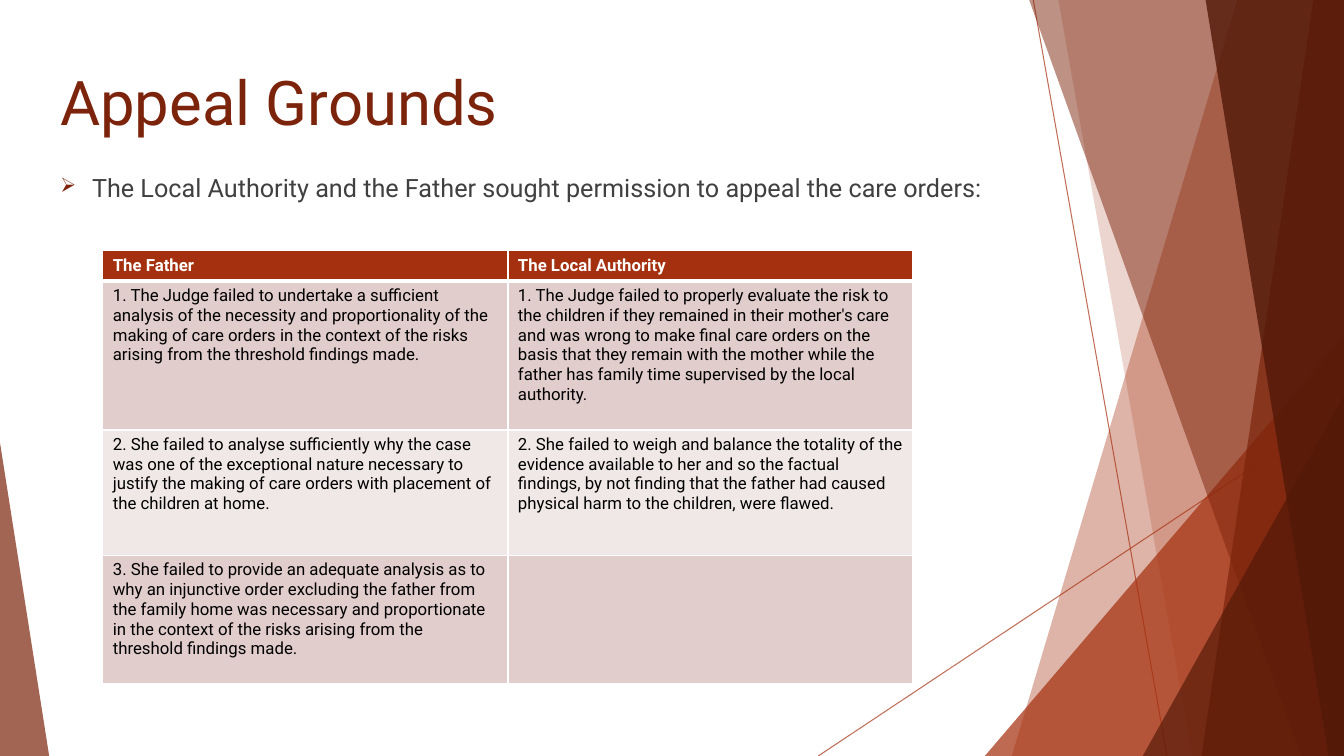
"""Build the Appeal Grounds slide."""
import dataclasses

import lxml.etree
import pptx
import pptx.dml.color
import pptx.enum.shapes
import pptx.enum.text
import pptx.oxml.ns
import pptx.util

Cm = pptx.util.Cm
Pt = pptx.util.Pt
qn = pptx.oxml.ns.qn


@dataclasses.dataclass(frozen=True)
class Theme:
    """Hold the colours, font and type sizes."""
    font: str = "Roboto"
    red: str = "A5300F"
    brown: str = "7C240B"
    dark: str = "521808"
    grey: str = "404040"
    black: str = "000000"
    white: str = "FFFFFF"
    bands: tuple = ("E1CDCC", "F0E8E7")
    title: int = 44
    body: int = 18
    cell: int = 12


THEME = Theme()
WIDE, HIGH, TOP = 33.87, 19.05, -0.02

GROUNDS = [
    ("The Father", "The Local Authority"),
    ("1. The Judge failed to undertake a sufficient analysis of the necessity and "
     "proportionality of the making of care orders in the context of the risks arising "
     "from the threshold findings made.",
     "1. The Judge failed to properly evaluate the risk to the children if they remained "
     "in their mother's care and was wrong to make final care orders on the basis that "
     "they remain with the mother while the father has family time supervised by the "
     "local authority."),
    ("2. She failed to analyse sufficiently why the case was one of the exceptional "
     "nature necessary to justify the making of care orders with placement of the "
     "children at home.",
     "2. She failed to weigh and balance the totality of the evidence available to her "
     "and so the factual findings, by not finding that the father had caused physical "
     "harm to the children, were flawed."),
    ("3. She failed to provide an adequate analysis as to why an injunctive order "
     "excluding the father from the family home was necessary and proportionate in the "
     "context of the risks arising from the threshold findings made.", ""),
]


def rgb(code):
    """Turn a hex code into a colour."""
    return pptx.dml.color.RGBColor.from_string(code)


def add_node(parent, tag, **attrs):
    """Append an XML child with attributes."""
    node = lxml.etree.SubElement(parent, qn(tag))
    for key, value in attrs.items():
        node.set(key, str(value))
    return node


def fade(part, alpha):
    """Give the solid colour in a part an opacity in percent."""
    tint = next(part.iter(qn("a:srgbClr")))
    add_node(tint, "a:alpha", val=alpha * 1000)


def paint(shape, color, alpha):
    """Fill a shape with a clear tint and no outline."""
    shape.shadow.inherit = False
    shape.line.fill.background()
    shape.fill.solid()
    shape.fill.fore_color.rgb = rgb(color)
    fade(shape.fill._xPr, alpha)


def add_ray(slide, *ends):
    """Draw a thin slanted line."""
    kind = pptx.enum.shapes.MSO_CONNECTOR.STRAIGHT
    ray = slide.shapes.add_connector(kind, *map(Cm, ends))
    ray.line.width = Pt(0.75)
    ray.line.color.rgb = rgb(THEME.red)
    fade(ray.line._ln, 70)
    add_node(ray._element.spPr, "a:effectLst")


def add_pane(slide, head, foot, color, alpha):
    """Draw a pane from a slanted left side to the slide's right edge."""
    pen = slide.shapes.build_freeform(Cm(head), Cm(TOP))
    spots = [(WIDE, TOP), (WIDE, HIGH), (foot, HIGH)]
    pen.add_line_segments([(Cm(x), Cm(y)) for x, y in spots], close=True)
    paint(pen.convert_to_shape(), color, alpha)


def add_wedge(slide, left, top, width, tip, color, alpha):
    """Draw a triangle that stands on the slide's lower edge."""
    kind = pptx.enum.shapes.MSO_SHAPE.ISOSCELES_TRIANGLE
    box = map(Cm, (left, top, width, HIGH - top))
    wedge = slide.shapes.add_shape(kind, *box)
    wedge.adjustments[0] = tip
    paint(wedge, color, alpha)


def put_text(frame, text, size, color, bold=False, bullet=None):
    """Write one formatted paragraph into a text frame."""
    frame.word_wrap = True
    para = frame.paragraphs[0]
    para.font.size = Pt(size)
    if text:
        run = para.add_run()
        run.text = text
        run.font.name = THEME.font
        run.font.size = Pt(size)
        run.font.bold = bold
        run.font.color.rgb = rgb(color)
    if bullet:
        props = para._p.get_or_add_pPr()
        props.set("marL", str(Cm(0.8)))
        props.set("indent", str(Cm(-0.8)))
        marks = [add_node(props, "a:buClr"),
                 add_node(props, "a:buSzPct", val=80000),
                 add_node(props, "a:buChar", char=bullet)]
        add_node(marks[0], "a:srgbClr", val=THEME.brown)
        props.extend(props.findall(qn("a:defRPr")))


def add_box(slide, top, text, anchor, **style):
    """Place a text box in the main column."""
    box = slide.shapes.add_textbox(Cm(1.27), Cm(top), Cm(23.88), Cm(2.44))
    box.text_frame.vertical_anchor = anchor
    put_text(box.text_frame, text, **style)


def rule_cell(cell, widths):
    """Draw white borders on the four sides of a cell."""
    props = cell._tc.get_or_add_tcPr()
    for spot, (side, width) in enumerate(widths.items()):
        line = add_node(props, "a:ln" + side, w=Pt(width))
        add_node(add_node(line, "a:solidFill"), "a:srgbClr", val=THEME.white)
        props.insert(spot, line)


def add_grid(slide, rows, highs):
    """Build the table with a header and banded rows."""
    size = map(Cm, (2.59, 6.32, 20.42, sum(highs)))
    grid = slide.shapes.add_table(len(rows), 2, *size).table
    for col in grid.columns:
        col.width = Cm(10.21)
    for i, (texts, high) in enumerate(zip(rows, highs)):
        grid.rows[i].height = Cm(high)
        head = i == 0
        for j, text in enumerate(texts):
            cell = grid.cell(i, j)
            cell.fill.solid()
            cell.fill.fore_color.rgb = rgb(THEME.red if head else THEME.bands[(i - 1) % 2])
            rule_cell(cell, {"L": 1, "R": 1, "T": 3 if i == 1 else 1, "B": 3 if head else 1})
            put_text(cell.text_frame, text, size=THEME.cell, bold=head,
                     color=THEME.white if head else THEME.black)


def add_decor(slide):
    """Draw the lines, panes and wedges at the slide's edges."""
    add_ray(slide, 26.04, 0, 29.41, HIGH)
    add_ray(slide, WIDE, 10.24, 20.62, HIGH)
    add_pane(slide, 31.19, 25.5, THEME.red, 36)
    add_pane(slide, 26.67, 30.05, THEME.red, 20)
    add_wedge(slide, 24.82, 8.46, 9.05, 1, THEME.red, 72)
    add_pane(slide, 25.93, 32.79, THEME.brown, 50)
    add_pane(slide, 33.1, 30.28, THEME.brown, 70)
    add_pane(slide, 30.38, 33.48, THEME.dark, 80)
    add_wedge(slide, 28.8, 9.98, 5.07, 1, THEME.dark, 66)
    add_wedge(slide, 0, 11.15, 1.24, 0, THEME.brown, 70)


def main():
    """Build and save the deck."""
    deck = pptx.Presentation()
    deck.slide_width, deck.slide_height = Cm(WIDE), Cm(HIGH)
    slide = deck.slides.add_slide(deck.slide_layouts[6])
    anchor = pptx.enum.text.MSO_ANCHOR
    add_decor(slide)
    add_box(slide, 1.17, "Appeal Grounds", anchor.BOTTOM,
            size=THEME.title, color=THEME.brown)
    add_box(slide, 4.22, "The Local Authority and the Father sought permission to "
            "appeal the care orders:", anchor.TOP,
            size=THEME.body, color=THEME.grey, bullet="➢")
    add_grid(slide, GROUNDS, (0.74, 3.75, 3.16, 3.23))
    deck.save("out.pptx")


if __name__ == "__main__":
    main()
